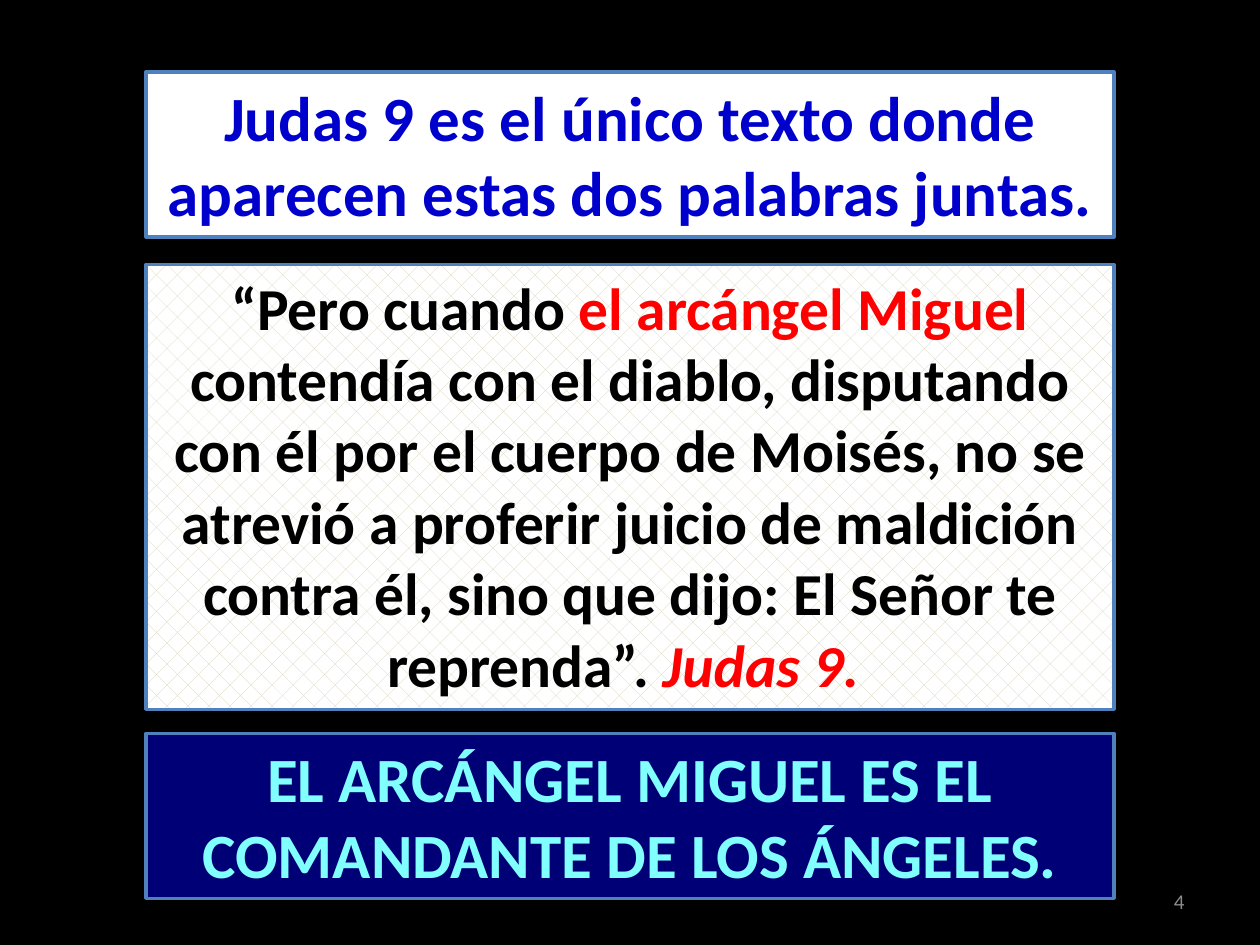
from dataclasses import dataclass
from typing import Optional

from lxml import etree
from pptx import Presentation
from pptx.dml.color import RGBColor
from pptx.enum import dml, shapes, text
from pptx.oxml import ns
from pptx.util import Inches, Pt

BLACK = RGBColor(0x00, 0x00, 0x00)
WHITE = RGBColor(0xFF, 0xFF, 0xFF)
RED = RGBColor(0xFF, 0x00, 0x00)
BLUE = RGBColor(0x00, 0x00, 0xCC)
NAVY = RGBColor(0x00, 0x00, 0x76)
CYAN = RGBColor(0x81, 0xFF, 0xFF)
BORDER = RGBColor(0x4F, 0x81, 0xBD)
BEIGE = RGBColor(0xD6, 0xD1, 0xB8)
GRAY = RGBColor(0x8C, 0x8C, 0x8C)

FONT = "Calibri"
PANEL_LEFT = Inches(1.16)
PANEL_WIDTH = Inches(7.68)


@dataclass(frozen=True)
class Phrase:
    wording: str
    color: RGBColor
    italic: Optional[bool] = None


@dataclass(frozen=True)
class Panel:
    top: float
    height: float
    fill: RGBColor
    size: int
    phrases: tuple[Phrase, ...]
    pattern_color: Optional[RGBColor] = None


PANELS = (
    Panel(2.1, 3.53, WHITE, 34, (
        Phrase("“Pero cuando ", BLACK),
        Phrase("el arcángel Miguel ", RED),
        Phrase("contendía con el diablo, disputando con él por el cuerpo de Moisés, "
               "no se atrevió a proferir juicio de maldición contra él, "
               "sino que dijo: El Señor te reprenda”. ", BLACK),
        Phrase("Judas 9. ", RED, italic=True),
    ), pattern_color=BEIGE),
    Panel(0.57, 1.31, WHITE, 36, (
        Phrase("Judas 9 es el único texto donde aparecen estas dos palabras juntas.", BLUE),
    )),
    Panel(5.82, 1.31, NAVY, 36, (
        Phrase("EL ARCÁNGEL MIGUEL ES EL COMANDANTE DE LOS ÁNGELES.", CYAN),
    )),
)


def outline_run(run, color: RGBColor, width: float) -> None:
    line = etree.Element(ns.qn("a:ln"), w=str(Pt(width)))
    fill = etree.SubElement(line, ns.qn("a:solidFill"))
    etree.SubElement(fill, ns.qn("a:srgbClr"), val=str(color))
    run.font._element.insert(0, line)


def add_text(paragraph, wording: str, *, size: int, color: RGBColor,
             bold: Optional[bool] = None, italic: Optional[bool] = None,
             outline: Optional[float] = None) -> None:
    run = paragraph.add_run()
    run.text = wording
    run.font.name = FONT
    run.font.size = Pt(size)
    run.font.color.rgb = color
    run.font.bold = bold
    run.font.italic = italic
    if outline is not None:
        outline_run(run, color, outline)


def add_panel(slide, panel: Panel) -> None:
    shape = slide.shapes.add_shape(
        shapes.MSO_SHAPE.RECTANGLE, PANEL_LEFT, Inches(panel.top),
        PANEL_WIDTH, Inches(panel.height))
    shape.shadow.inherit = False
    shape.line.color.rgb = BORDER
    shape.line.width = Pt(2)
    if panel.pattern_color is None:
        shape.fill.solid()
        shape.fill.fore_color.rgb = panel.fill
    else:
        shape.fill.patterned()
        shape.fill.pattern = dml.MSO_PATTERN.DIAGONAL_BRICK
        shape.fill.fore_color.rgb = panel.pattern_color
        shape.fill.back_color.rgb = panel.fill
    frame = shape.text_frame
    frame.word_wrap = True
    frame.auto_size = text.MSO_AUTO_SIZE.SHAPE_TO_FIT_TEXT
    frame.vertical_anchor = text.MSO_ANCHOR.TOP
    paragraph = frame.paragraphs[0]
    paragraph.alignment = text.PP_ALIGN.CENTER
    for phrase in panel.phrases:
        add_text(paragraph, phrase.wording, size=panel.size, color=phrase.color,
                 bold=True, italic=phrase.italic, outline=0.75)


def add_page_number(slide, number: str) -> None:
    box = slide.shapes.add_textbox(Inches(7.17), Inches(6.95), Inches(2.33), Inches(0.4))
    frame = box.text_frame
    frame.word_wrap = True
    frame.vertical_anchor = text.MSO_ANCHOR.MIDDLE
    paragraph = frame.paragraphs[0]
    paragraph.alignment = text.PP_ALIGN.RIGHT
    add_text(paragraph, number, size=12, color=GRAY)


def main() -> None:
    presentation = Presentation()
    presentation.slide_width = Inches(10)
    presentation.slide_height = Inches(7.5)
    slide = presentation.slides.add_slide(presentation.slide_layouts[6])
    slide.background.fill.solid()
    slide.background.fill.fore_color.rgb = BLACK
    add_page_number(slide, "4")
    for panel in PANELS:
        add_panel(slide, panel)
    presentation.save("out.pptx")


if __name__ == "__main__":
    main()
